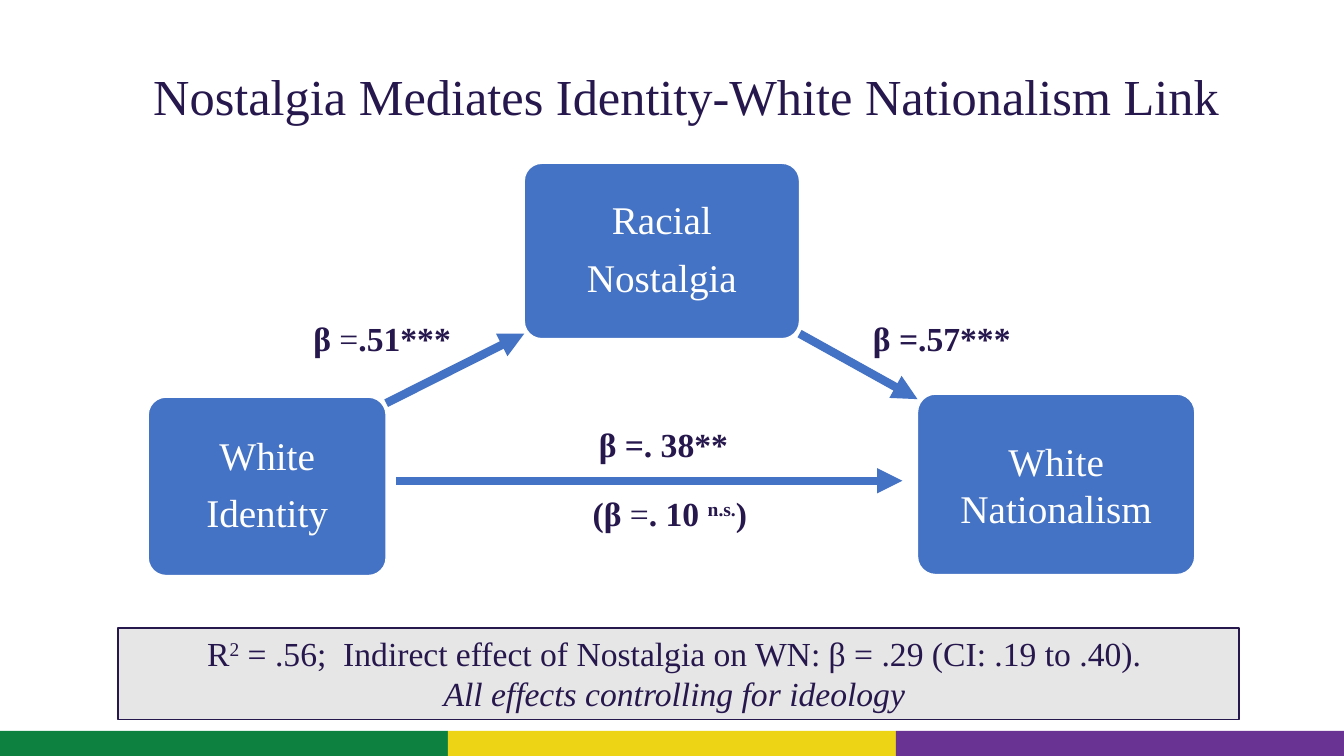
import pptx
import pptx.dml.color
import pptx.enum.shapes
import pptx.enum.text
import pptx.oxml
import pptx.oxml.ns
import pptx.util
from pptx.util import Inches

INK = "26174D"
BLUE = "4472C4"
WHITE = "FFFFFF"
SHAPES = pptx.enum.shapes.MSO_SHAPE
CENTER = pptx.enum.text.PP_ALIGN.CENTER
MIDDLE = pptx.enum.text.MSO_ANCHOR.MIDDLE


def color(hex_string):
    return pptx.dml.color.RGBColor.from_string(hex_string)


def add_runs(paragraph, runs, size, hex_string):
    for text, style in runs:
        run = paragraph.add_run()
        run.text = text
        run.font.name = "Times New Roman"
        run.font.size = pptx.util.Pt(size)
        run.font.color.rgb = color(hex_string)
        run.font.bold = "bold" in style
        run.font.italic = "italic" in style
        if "super" in style:
            run._r.get_or_add_rPr().set("baseline", "30000")


presentation = pptx.Presentation()
presentation.slide_width = Inches(13.33)
presentation.slide_height = Inches(7.5)
slide = presentation.slides.add_slide(presentation.slide_layouts[5])

band_width = 13.33 / 3
for index, fill in enumerate(["0D8240", "EDD414", "693394"]):
    band = slide.shapes.add_shape(
        SHAPES.RECTANGLE, Inches(index * band_width), Inches(7.25), Inches(band_width), Inches(0.25)
    )
    band.shadow.inherit = False
    band.fill.solid()
    band.fill.fore_color.rgb = color(fill)
    band.line.fill.background()

title = slide.shapes.title
title.left, title.top = Inches(1.17), Inches(0.53)
title.width, title.height = Inches(11.28), Inches(0.91)
title.text_frame.auto_size = pptx.enum.text.MSO_AUTO_SIZE.NONE
title.text_frame.word_wrap = True
title.text_frame.vertical_anchor = MIDDLE
title_paragraph = title.text_frame.paragraphs[0]
title_paragraph.alignment = CENTER
title_paragraph.line_spacing = 0.9
add_runs(title_paragraph, [("Nostalgia Mediates Identity-White Nationalism Link", "")], 36, INK)

variables = [
    (1.47, 3.94, 2.36, 1.77, 0.19, ["White", "Identity"]),
    (5.2, 1.62, 2.73, 1.74, 0.18, ["Racial", "Nostalgia"]),
    (9.1, 3.91, 2.75, 1.79, 0.17, ["White Nationalism"]),
]
for left, top, width, height, inset, lines in variables:
    box = slide.shapes.add_shape(
        SHAPES.ROUNDED_RECTANGLE, Inches(left), Inches(top), Inches(width), Inches(height)
    )
    box.adjustments[0] = 0.1
    box.shadow.inherit = False
    box.fill.solid()
    box.fill.fore_color.rgb = color(BLUE)
    box.line.color.rgb = color(WHITE)
    box.line.width = pptx.util.Pt(1)
    frame = box.text_frame
    frame.word_wrap = True
    frame.vertical_anchor = MIDDLE
    frame.margin_left = frame.margin_right = Inches(inset)
    frame.margin_top = frame.margin_bottom = Inches(inset)
    for index, line in enumerate(lines):
        paragraph = frame.add_paragraph() if index else frame.paragraphs[0]
        paragraph.alignment = CENTER
        if len(lines) > 1:
            paragraph.line_spacing = 0.9
            paragraph.space_after = pptx.util.Pt(11)
        add_runs(paragraph, [(line, "")], 28, WHITE)

coefficients = [
    (3.01, 3.1, 1.84, [("β", "bold"), (" =", ""), (".51***", "bold")]),
    (8.56, 3.1, 1.91, [("β =.57***", "bold")]),
    (5.84, 4.16, 1.65, [("β =. 38**", "bold")]),
    (5.78, 4.84, 2.16, [("(β", "bold"), (" =", ""), (". 10 ", "bold"), ("n.s.", "bold super"), (")", "bold")]),
]
for left, top, width, runs in coefficients:
    label = slide.shapes.add_textbox(Inches(left), Inches(top), Inches(width), Inches(0.5))
    label.text_frame.word_wrap = True
    add_runs(label.text_frame.paragraphs[0], runs, 24, INK)

summary = slide.shapes.add_shape(
    SHAPES.RECTANGLE, Inches(1.17), Inches(6.23), Inches(11.12), Inches(0.91)
)
summary.shadow.inherit = False
summary.fill.solid()
summary.fill.fore_color.rgb = color("E7E6E6")
summary.line.color.rgb = color(INK)
summary.line.width = pptx.util.Pt(1)
summary.text_frame.word_wrap = True
summary.text_frame.vertical_anchor = pptx.enum.text.MSO_ANCHOR.TOP
summary_lines = [
    [("R", ""), ("2", "super"), (" = .56;  Indirect effect of Nostalgia on WN: β = .29 (CI: .19 to .40). ", "")],
    [("All effects controlling for ideology ", "italic")],
]
for index, runs in enumerate(summary_lines):
    paragraph = summary.text_frame.add_paragraph() if index else summary.text_frame.paragraphs[0]
    paragraph.alignment = CENTER
    add_runs(paragraph, runs, 24, INK)

arrows = [(3.93, 4.77, 8.95, 4.77), (3.83, 4, 5.2, 3.31), (7.93, 3.31, 9.1, 3.96)]
for coordinates in arrows:
    arrow = slide.shapes.add_connector(
        pptx.enum.shapes.MSO_CONNECTOR.STRAIGHT, *[Inches(value) for value in coordinates]
    )
    arrow.line.color.rgb = color(BLUE)
    arrow.line.width = pptx.util.Pt(6)
    namespace = pptx.oxml.ns.nsdecls("a")
    arrow.line._get_or_add_ln().append(pptx.oxml.parse_xml(f'<a:tailEnd {namespace} type="triangle"/>'))
    arrow._element.spPr.append(pptx.oxml.parse_xml(f"<a:effectLst {namespace}/>"))

presentation.save("out.pptx")
